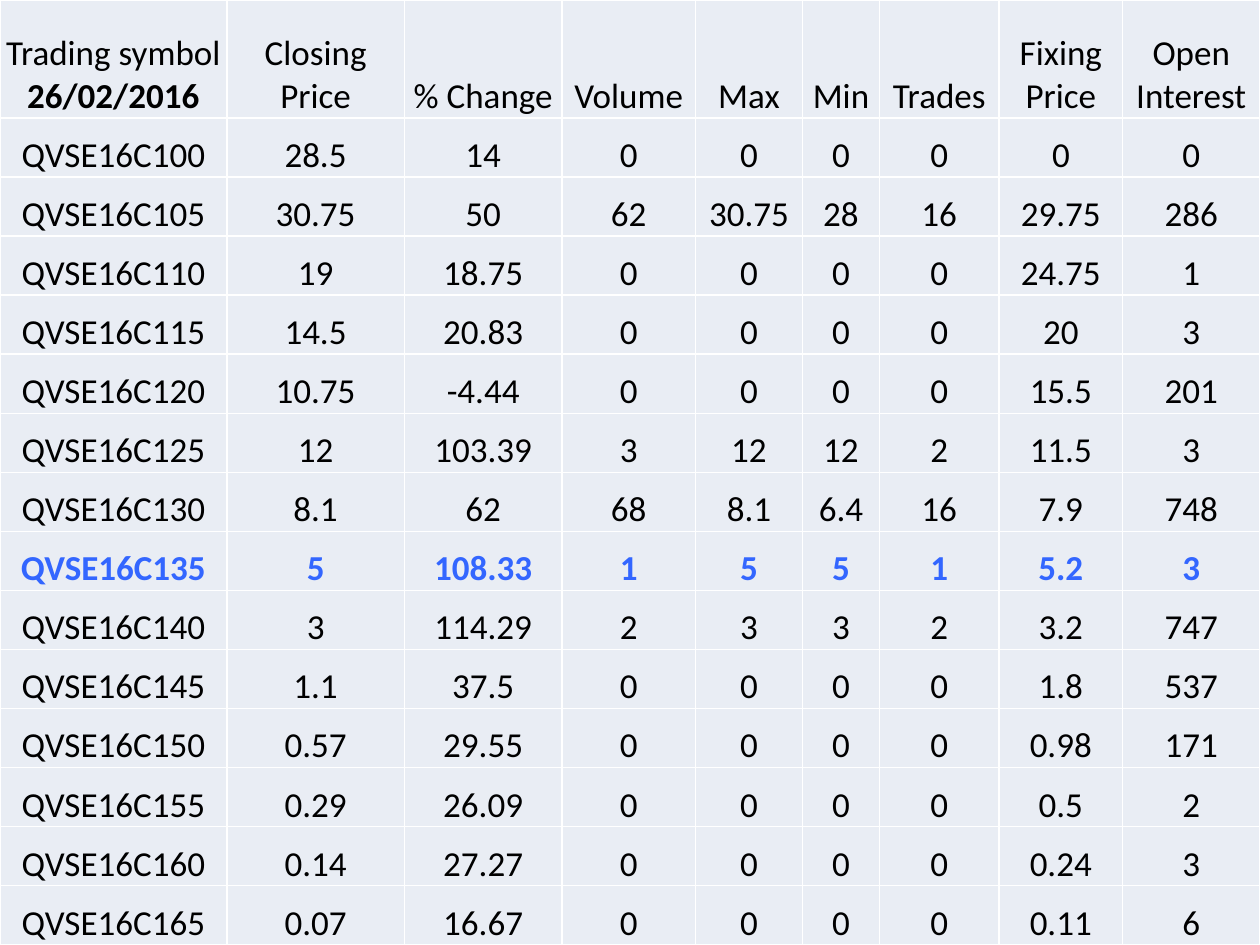
from lxml import etree
from pptx import Presentation
from pptx.dml.color import RGBColor
from pptx.enum.text import MSO_ANCHOR, PP_ALIGN
from pptx.oxml.ns import qn
from pptx.util import Inches, Pt

COLORS = {"cell": "E9EDF4", "border": "FFFFFF", "text": "000000", "highlight": "3366FF"}
FONT = "Calibri"
FONT_SIZE = 20
COLUMN_WIDTHS = [1.8, 1.41, 1.25, 1.06, 0.85, 0.61, 0.95, 0.98, 1.09]
HEADERS = ["Trading symbol", "Closing Price", "% Change", "Volume", "Max", "Min",
           "Trades", "Fixing Price", "Open Interest"]
TRADING_DATE = "26/02/2016"
SYMBOL_PREFIX = "QVSE16C"
HIGHLIGHTED_STRIKE = 135
FIRST_STRIKE, STRIKE_STEP = 100, 5
QUOTES = [
    "28.5 14 0 0 0 0 0 0",
    "30.75 50 62 30.75 28 16 29.75 286",
    "19 18.75 0 0 0 0 24.75 1",
    "14.5 20.83 0 0 0 0 20 3",
    "10.75 -4.44 0 0 0 0 15.5 201",
    "12 103.39 3 12 12 2 11.5 3",
    "8.1 62 68 8.1 6.4 16 7.9 748",
    "5 108.33 1 5 5 1 5.2 3",
    "3 114.29 2 3 3 2 3.2 747",
    "1.1 37.5 0 0 0 0 1.8 537",
    "0.57 29.55 0 0 0 0 0.98 171",
    "0.29 26.09 0 0 0 0 0.5 2",
    "0.14 27.27 0 0 0 0 0.24 3",
    "0.07 16.67 0 0 0 0 0.11 6",
]


def add_borders(cell):
    properties = cell._tc.get_or_add_tcPr()
    for side in ("a:lnL", "a:lnR", "a:lnT", "a:lnB"):
        line = etree.SubElement(properties, qn(side), w=str(Pt(1)))
        fill = etree.SubElement(line, qn("a:solidFill"))
        etree.SubElement(fill, qn("a:srgbClr"), val=COLORS["border"])


def format_cell(cell):
    add_borders(cell)
    cell.fill.solid()
    cell.fill.fore_color.rgb = RGBColor.from_string(COLORS["cell"])
    cell.vertical_anchor = MSO_ANCHOR.BOTTOM
    cell.margin_left = cell.margin_right = cell.margin_top = Inches(0.01)
    cell.margin_bottom = 0


def write_line(paragraph, text, color="text", bold=False):
    paragraph.alignment = PP_ALIGN.CENTER
    run = paragraph.add_run()
    run.text = text
    run.font.name = FONT
    run.font.size = Pt(FONT_SIZE)
    run.font.bold = bold
    run.font.color.rgb = RGBColor.from_string(COLORS[color])


def add_quote_table(slide, left, top, width, height):
    """Place the option quotes; the header is twice as tall as a quote row."""
    row_count = len(QUOTES) + 1
    table = slide.shapes.add_table(
        row_count, len(HEADERS), left, top, width, height).table
    for column, column_width in zip(table.columns, COLUMN_WIDTHS):
        column.width = int(width * column_width / sum(COLUMN_WIDTHS))
    row_height = height // (row_count + 1)
    for row in table.rows:
        row.height = row_height
    table.rows[0].height = 2 * row_height
    for cell in table.iter_cells():
        format_cell(cell)

    for index, header in enumerate(HEADERS):
        write_line(table.cell(0, index).text_frame.paragraphs[0], header)
    write_line(table.cell(0, 0).text_frame.add_paragraph(), TRADING_DATE, bold=True)

    for row_index, quote in enumerate(QUOTES, start=1):
        strike = FIRST_STRIKE + (row_index - 1) * STRIKE_STEP
        highlighted = strike == HIGHLIGHTED_STRIKE
        color = "highlight" if highlighted else "text"
        for index, value in enumerate([f"{SYMBOL_PREFIX}{strike}", *quote.split()]):
            paragraph = table.cell(row_index, index).text_frame.paragraphs[0]
            write_line(paragraph, value, color, highlighted)


def main():
    presentation = Presentation()
    presentation.slide_width = Inches(10)
    presentation.slide_height = Inches(7.5)
    slide = presentation.slides.add_slide(presentation.slide_layouts[6])
    add_quote_table(slide, Inches(0), Inches(0), Inches(10), Inches(7.5))
    presentation.save("out.pptx")


if __name__ == "__main__":
    main()
